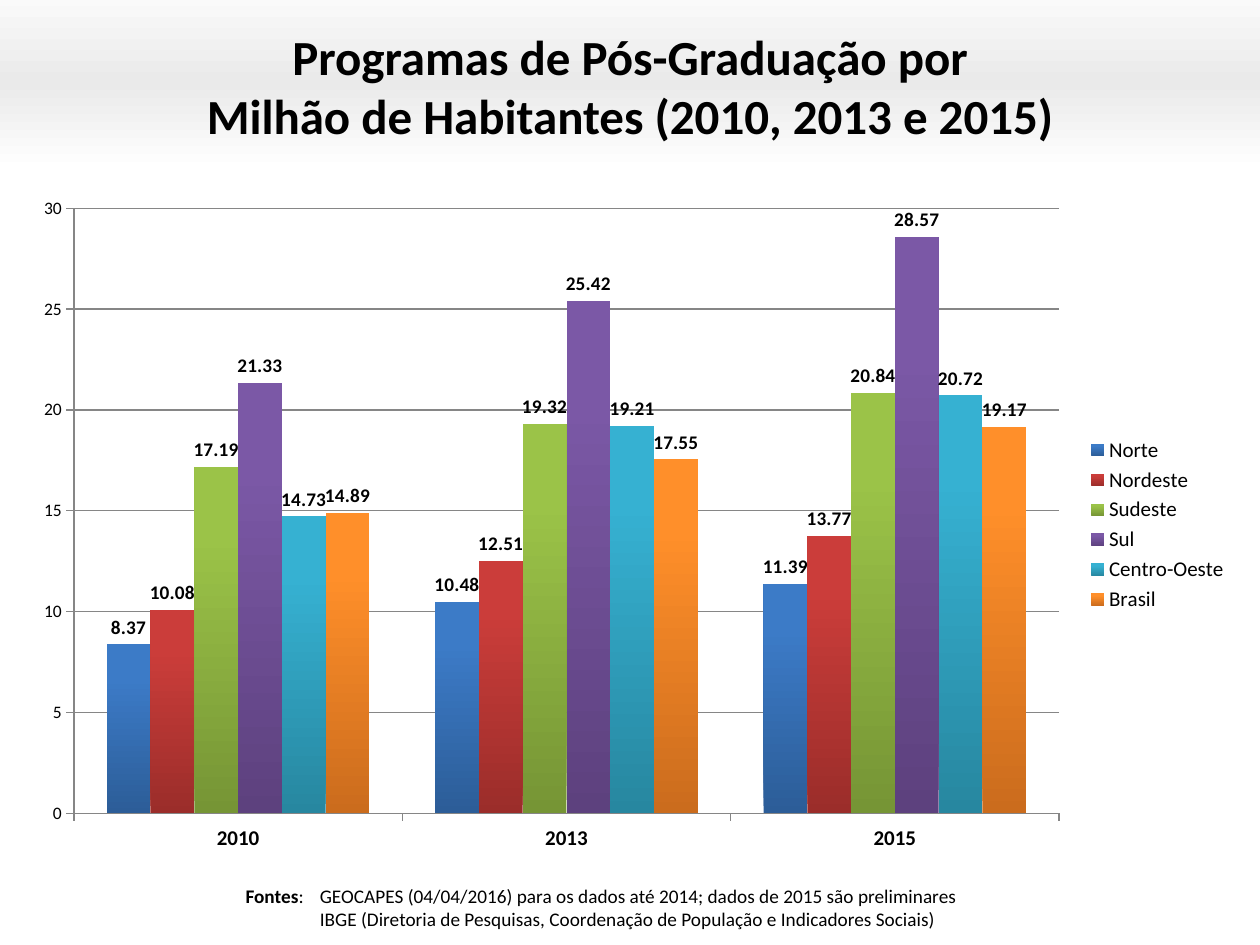
from copy import deepcopy

from lxml import etree
from pptx import Presentation
from pptx.chart.data import CategoryChartData
from pptx.dml.color import RGBColor
from pptx.enum.chart import XL_CHART_TYPE as ChartType
from pptx.enum.chart import XL_LABEL_POSITION as LabelPosition
from pptx.enum.chart import XL_LEGEND_POSITION as LegendPosition
from pptx.enum.chart import XL_TICK_MARK as TickMark
from pptx.enum.shapes import MSO_SHAPE as Shape
from pptx.enum.text import MSO_ANCHOR as Anchor
from pptx.enum.text import PP_ALIGN as Align
from pptx.oxml import parse_xml
from pptx.oxml.ns import nsdecls, qn
from pptx.util import Inches, Pt

FONT = "Calibri"
COLORS = {"text": "000000", "axis": "868686", "band_top": "FAFAFA",
          "band_middle": "EAEAEA", "band_bottom": "FFFFFF"}
YEARS = ["2010", "2013", "2015"]
# region, values by year, bar colour at the foot and at the top
REGIONS = [
    ("Norte", (8.37, 10.48, 11.39), "2C5D98", "3C7BC7"),
    ("Nordeste", (10.08, 12.51, 13.77), "9B2D2A", "CB3D3A"),
    ("Sudeste", (17.19, 19.32, 20.84), "769535", "9BC348"),
    ("Sul", (21.33, 25.42, 28.57), "5D417E", "7B58A6"),
    ("Centro-Oeste", (14.73, 19.21, 20.72), "2787A0", "36B1D2"),
    ("Brasil", (14.89, 17.55, 19.17), "CB6C1D", "FF8F2A"),
]


def style_font(font, size, bold=False):
    formats = {"name": FONT, "size": Pt(size), "bold": bold}
    for attribute, value in formats.items():
        setattr(font, attribute, value)
    font.color.rgb = RGBColor.from_string(COLORS["text"])


def set_gradient(fill, angle, stops):
    """Colour the existing stops, given as (position, hex) pairs."""
    fill.gradient_angle = angle
    for stop, (position, color) in zip(fill.gradient_stops, stops):
        stop.position = position
        stop.color.rgb = RGBColor.from_string(color)


presentation = Presentation()
presentation.slide_width = Inches(10)
presentation.slide_height = Inches(7.5)
slide = presentation.slides.add_slide(presentation.slide_layouts[6])

# Title band, with a third gradient stop
band = slide.shapes.add_shape(Shape.RECTANGLE, Inches(0), Inches(-0.04),
                              Inches(10), Inches(1.39))
band.shadow.inherit = False
band.line.fill.background()
band.fill.gradient()
stop_list = next(band._element.iter(qn("a:gsLst")))
stop_list.append(deepcopy(stop_list[-1]))
set_gradient(band.fill, 270, [(0, COLORS["band_top"]), (0.5, COLORS["band_middle"]),
                              (1, COLORS["band_bottom"])])

# Title
title = slide.shapes.add_textbox(Inches(0), Inches(-0.03), Inches(10), Inches(1.42))
title_frame = title.text_frame
title_frame.word_wrap = True
title_frame.vertical_anchor = Anchor.MIDDLE
title_frame.text = "Programas de Pós-Graduação por\nMilhão de Habitantes (2010, 2013 e 2015)"
for paragraph in title_frame.paragraphs:
    paragraph.alignment = Align.CENTER
    style_font(paragraph.runs[0].font, 28, True)

# Chart
chart_data = CategoryChartData(number_format="0.00")
chart_data.categories = YEARS
for name, values, foot, top in REGIONS:
    chart_data.add_series(name, values)
chart = slide.shapes.add_chart(ChartType.COLUMN_CLUSTERED, Inches(0.16), Inches(1.47),
                               Inches(9.69), Inches(5.39), chart_data).chart
chart.has_title = False
style_font(chart.font, 10)
chart.has_legend = True
chart.legend.position = LegendPosition.RIGHT
chart.legend.include_in_layout = False
style_font(chart.legend.font, 12)

value_axis, category_axis = chart.value_axis, chart.category_axis
value_axis.minimum_scale, value_axis.maximum_scale, value_axis.major_unit = 0, 30, 5
value_axis.has_major_gridlines = True
value_axis.tick_labels.number_format = "0"
value_axis.tick_labels.number_format_is_linked = False
for axis in (value_axis, category_axis):
    axis.major_tick_mark = TickMark.OUTSIDE
for line in (value_axis.format.line, category_axis.format.line,
             value_axis.major_gridlines.format.line):
    line.color.rgb = RGBColor.from_string(COLORS["axis"])
    line.width = Pt(0.75)
style_font(category_axis.tick_labels.font, 12, True)

plot = chart.plots[0]
plot.gap_width = 150
plot.overlap = 0
plot.vary_by_categories = False
for series, (name, values, foot, top) in zip(plot.series, REGIONS):
    series.invert_if_negative = False
    series.format.fill.gradient()
    set_gradient(series.format.fill, 90, [(0, foot), (0.8, top)])
    labels = series.data_labels
    labels.show_value = True
    labels.position = LabelPosition.OUTSIDE_END
    style_font(labels.font, 11, True)

# Fixed inner plot area, as fractions of the chart
plot_area = chart._chartSpace.chart.plotArea
for old_layout in plot_area.findall(qn("c:layout")):
    plot_area.remove(old_layout)
layout = parse_xml(f'<c:layout {nsdecls("c")}><c:manualLayout/></c:layout>')
for tag, value in [("layoutTarget", "inner"), ("xMode", "edge"), ("yMode", "edge"),
                   ("x", "0.044"), ("y", "0.034"), ("w", "0.807"), ("h", "0.891")]:
    etree.SubElement(layout[0], qn(f"c:{tag}")).set("val", value)
plot_area.insert(0, layout)

# Sources
sources = slide.shapes.add_textbox(Inches(1.85), Inches(6.97), Inches(6.45), Inches(0.49))
sources_frame = sources.text_frame
sources_frame.word_wrap = True
source_lines = [
    [("Fontes", True),
     (":\tGEOCAPES (04/04/2016) para os dados até 2014; dados de 2015 são preliminares", False)],
    [("\tIBGE (Diretoria de Pesquisas, Coordenação de População e Indicadores Sociais)", False)],
]
for index, runs in enumerate(source_lines):
    paragraph = sources_frame.add_paragraph() if index else sources_frame.paragraphs[0]
    tab_list = etree.SubElement(paragraph._p.get_or_add_pPr(), qn("a:tabLst"))
    etree.SubElement(tab_list, qn("a:tab"), pos=str(Inches(0.59)), algn="l")
    for text, bold in runs:
        run = paragraph.add_run()
        run.text = text
        style_font(run.font, 11, bold)

presentation.save("out.pptx")
